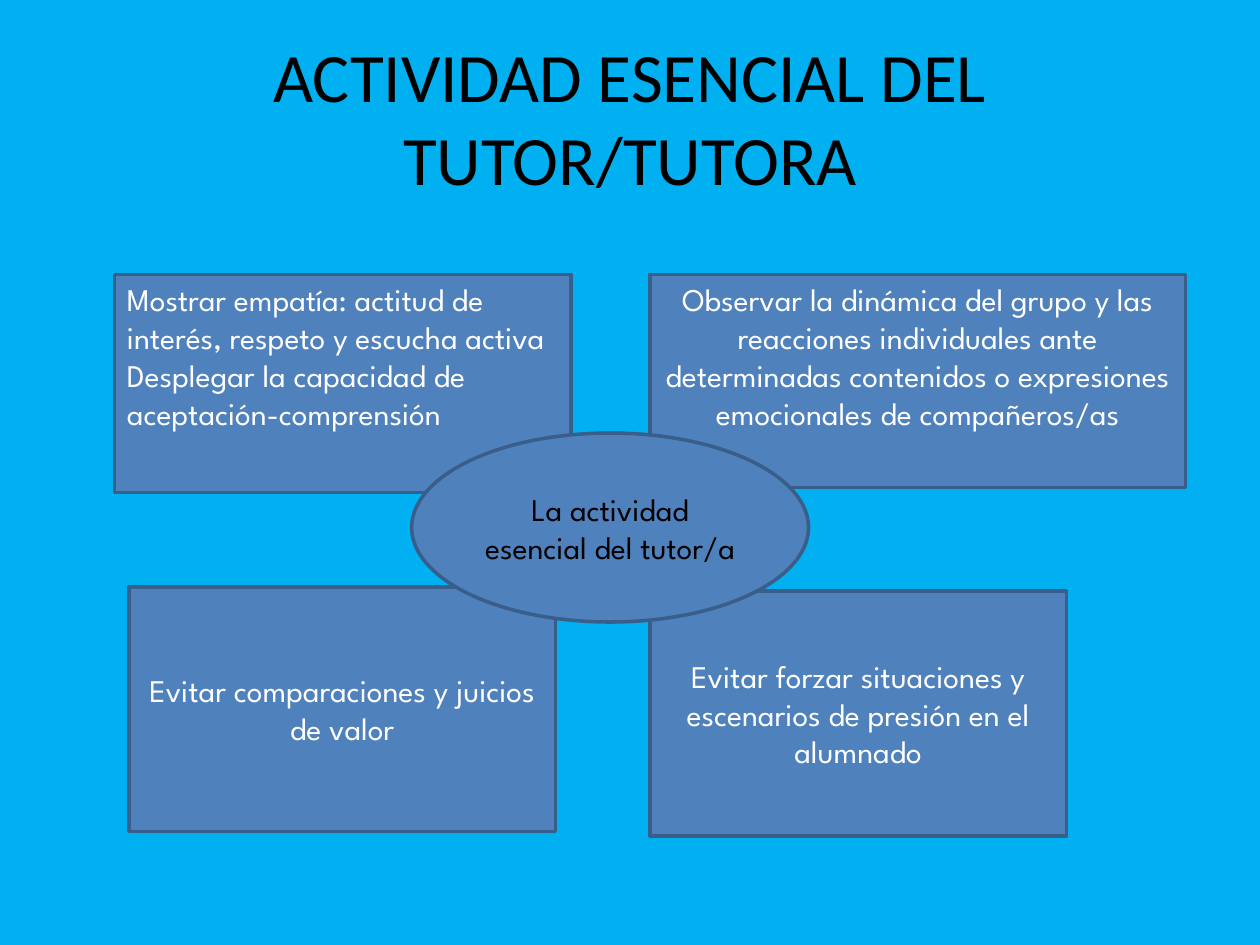
from dataclasses import dataclass

from pptx import Presentation
from pptx.dml.color import RGBColor
from pptx.enum.shapes import MSO_SHAPE
from pptx.enum.text import MSO_ANCHOR, MSO_AUTO_SIZE, PP_ALIGN
from pptx.util import Cm, Pt

RECT = MSO_SHAPE.RECTANGLE
OVAL = MSO_SHAPE.OVAL
LEFT = PP_ALIGN.LEFT
CENTER = PP_ALIGN.CENTER
TOP = MSO_ANCHOR.TOP
MIDDLE = MSO_ANCHOR.MIDDLE
NO_FIT = MSO_AUTO_SIZE.NONE

SKY = RGBColor(0x00, 0xB0, 0xF0)
BLUE = RGBColor(0x4F, 0x81, 0xBD)
EDGE = RGBColor(0x39, 0x5E, 0x89)
WHITE = RGBColor(0xFF, 0xFF, 0xFF)
BLACK = RGBColor(0x00, 0x00, 0x00)


@dataclass
class Bubble:
    text: str
    left: float
    top: float
    width: float
    height: float
    kind: MSO_SHAPE = RECT
    color: RGBColor = WHITE
    align: PP_ALIGN = CENTER
    anchor: MSO_ANCHOR = MIDDLE


BUBBLES = [
    Bubble("Mostrar empatía: actitud de interés, respeto y escucha activa\n"
           "Desplegar la capacidad de aceptación-comprensión",
           2.31, 5.53, 9.2, 4.4, align=LEFT, anchor=TOP),
    Bubble("Observar la dinámica del grupo y las reacciones individuales ante "
           "determinadas contenidos o expresiones emocionales de compañeros/as",
           13.1, 5.53, 10.8, 4.3, anchor=TOP),
    Bubble("Evitar comparaciones y juicios de valor", 2.6, 11.83, 8.6, 4.93),
    Bubble("Evitar forzar situaciones y escenarios de presión en el alumnado",
           13.1, 11.92, 8.4, 4.93),
    Bubble("La actividad esencial del tutor/a", 8.3, 8.73, 8, 3.81, OVAL, BLACK),
]


def set_text(sp, text: str, font: str, size: float, color: RGBColor,
             align: PP_ALIGN, anchor: MSO_ANCHOR) -> None:
    tf = sp.text_frame
    tf.text = text
    tf.word_wrap = True
    tf.auto_size = NO_FIT
    tf.vertical_anchor = anchor
    for p in tf.paragraphs:
        p.alignment = align
        for r in p.runs:
            r.font.name = font
            r.font.size = Pt(size)
            r.font.color.rgb = color


def add_bubble(s, b: Bubble) -> None:
    sp = s.shapes.add_shape(b.kind, Cm(b.left), Cm(b.top), Cm(b.width), Cm(b.height))
    sp.shadow.inherit = False
    sp.fill.solid()
    sp.fill.fore_color.rgb = BLUE
    sp.line.color.rgb = EDGE
    sp.line.width = Pt(2)
    set_text(sp, b.text, "League Spartan", 18, b.color, b.align, b.anchor)


def main() -> None:
    prs = Presentation()
    prs.slide_width, prs.slide_height = Cm(25.4), Cm(19.05)
    s = prs.slides.add_slide(prs.slide_layouts[5])
    s.background.fill.solid()
    s.background.fill.fore_color.rgb = SKY

    title = s.shapes.title
    title.left, title.top = Cm(1.27), Cm(0.76)
    title.width, title.height = Cm(22.86), Cm(3.18)
    set_text(title, "ACTIVIDAD ESENCIAL DEL TUTOR/TUTORA", "Calibri", 39.6,
             BLACK, CENTER, MIDDLE)

    for b in BUBBLES:
        add_bubble(s, b)
    prs.save("out.pptx")


if __name__ == "__main__":
    main()
